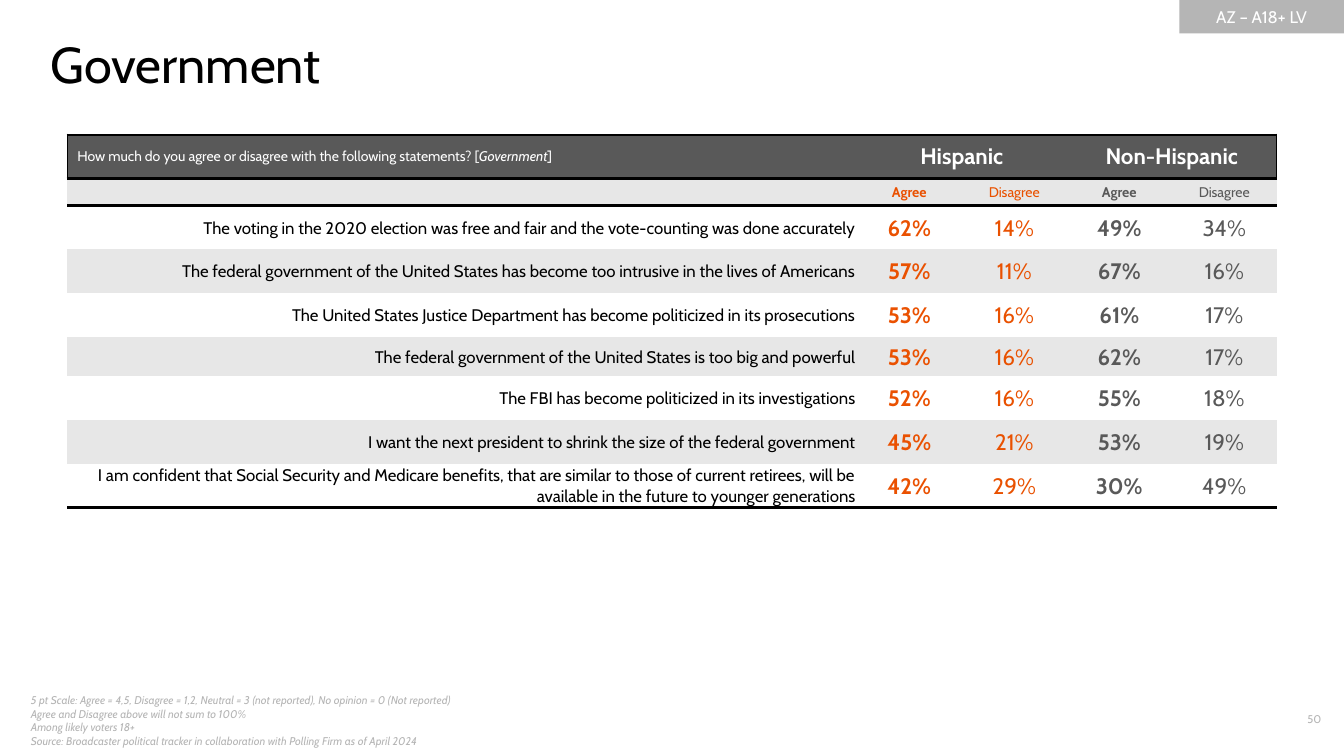
import pptx
import pptx.util
import pptx.dml.color
import pptx.enum.shapes
import pptx.enum.text
import pptx.oxml
import pptx.oxml.ns

RGB = pptx.dml.color.RGBColor
ALIGN = pptx.enum.text.PP_ALIGN
ANCHOR = pptx.enum.text.MSO_ANCHOR
BLACK = RGB(0, 0, 0)
WHITE = RGB(255, 255, 255)
DARK = RGB(0x59, 0x59, 0x59)
PALE = RGB(0xE7, 0xE7, 0xE7)
GRAY = RGB(0xB5, 0xB5, 0xB5)
RUST = RGB(0xEA, 0x51, 0x01)
EMBER = RGB(0xE9, 0x51, 0x00)
TONES = [(RUST, True), (EMBER, False), (DARK, True), (DARK, False)]
PLAIN = "{2D5ABB26-0587-4C30-8999-92F81FD0307C}"
WIDE, HIGH = 13.33, 7.5
COLS = 80
THICK, THIN = 2.25, 1

ROWS = [
    ("The voting in the 2020 election was free and fair and the vote-counting was done accurately",
     62, 14, 49, 34),
    ("The federal government of the United States has become too intrusive in the lives of Americans",
     57, 11, 67, 16),
    ("The United States Justice Department has become politicized in its prosecutions",
     53, 16, 61, 17),
    ("The federal government of the United States is too big and powerful", 53, 16, 62, 17),
    ("The FBI has become politicized in its investigations", 52, 16, 55, 18),
    ("I want the next president to shrink the size of the federal government", 45, 21, 53, 19),
    ("I am confident that Social Security and Medicare benefits, that are similar to those of "
     "current retirees, will be available in the future to younger generations", 42, 29, 30, 49),
]
NOTES = """5 pt Scale: Agree = 4,5, Disagree = 1,2, Neutral = 3 (not reported), No opinion = 0 (Not reported)
Agree and Disagree above will not sum to 100%
Among likely voters 18+
Source: Broadcaster political tracker in collaboration with Polling Firm as of April 2024"""


def grid(n):
    return pptx.util.Inches(n * WIDE / COLS)


def write(frame, text, size=12, color=BLACK, bold=False, italic=False, align=ALIGN.LEFT):
    for i, line in enumerate(text.split("\n")):
        para = frame.paragraphs[0] if i == 0 else frame.add_paragraph()
        para.alignment = align
        for j, part in enumerate(line.split("|")):
            run = para.add_run()
            run.text = part
            font = run.font
            font.name, font.size, font.bold = "Cabin", pptx.util.Pt(size), bold
            font.italic = italic or j % 2 == 1
            font.color.rgb = color


def paint(cell, fill, tight=False):
    cell.fill.solid()
    cell.fill.fore_color.rgb = fill
    cell.vertical_anchor = ANCHOR.MIDDLE
    if tight:
        cell.margin_left = cell.margin_right = cell.margin_top = pptx.util.Inches(0.01)
        cell.margin_bottom = 0


def edge(cell, **sides):
    props = cell._tc.get_or_add_tcPr()
    names = [side for side in ("L", "R", "T", "B") if side in sides]
    for i, side in enumerate(names):
        line = pptx.oxml.parse_xml(
            f'<a:ln{side} {pptx.oxml.ns.nsdecls("a")} w="{pptx.util.Pt(sides[side])}">'
            f'<a:solidFill><a:srgbClr val="{BLACK}"/></a:solidFill></a:ln{side}>')
        props.insert(i, line)


def title(slide, x, y, w, h):
    head = slide.shapes.title
    head.left, head.top, head.width, head.height = map(grid, (x, y, w, h))
    frame = head.text_frame
    frame.margin_left = frame.margin_right = frame.margin_top = frame.margin_bottom = 0
    frame.vertical_anchor = ANCHOR.TOP
    frame.auto_size = pptx.enum.text.MSO_AUTO_SIZE.NONE
    write(frame, "Government", size=36)


def badge(slide, x, y, w, h):
    kind = pptx.enum.shapes.MSO_SHAPE.RECTANGLE
    tag = slide.shapes.add_shape(kind, *map(grid, (x, y, w, h)))
    tag.shadow.inherit = False
    tag.fill.solid()
    tag.fill.fore_color.rgb = GRAY
    tag.line.fill.background()
    tag.text_frame.vertical_anchor = ANCHOR.MIDDLE
    write(tag.text_frame, "AZ – A18+ LV", color=WHITE, align=ALIGN.CENTER)


def label(slide, x, y, w, h, text, anchor=ANCHOR.TOP, **look):
    frame = slide.shapes.add_textbox(*map(grid, (x, y, w, h))).text_frame
    frame.word_wrap = True
    frame.vertical_anchor = anchor
    write(frame, text, size=8, color=GRAY, **look)


def heads(table):
    ask = "How much do you agree or disagree with the following statements? [|Government|]"
    write(table.cell(0, 0).text_frame, ask, size=10, color=WHITE)
    for col, name in ((1, "Hispanic"), (3, "Non-Hispanic")):
        table.cell(0, col).merge(table.cell(0, col + 1))
        write(table.cell(0, col).text_frame, name, size=16, color=WHITE, bold=True,
              align=ALIGN.CENTER)
    for col in range(5):
        top, sub = table.cell(0, col), table.cell(1, col)
        paint(top, DARK)
        paint(sub, PALE)
        sides = {"L": THIN} if col == 0 else {"R": THIN} if col > 2 else {}
        edge(top, T=THICK, B=THICK, **sides)
        edge(sub, T=THICK)
    blank = table.cell(1, 0).text_frame.paragraphs[0]
    blank._p.get_or_add_endParaRPr().set("sz", "1000")
    for col, (color, bold) in enumerate(TONES, 1):
        write(table.cell(1, col).text_frame, "Agree" if bold else "Disagree", size=10,
              color=color, bold=bold, align=ALIGN.CENTER)


def survey(slide, x, y, w, h):
    count = len(ROWS) + 2
    frame = slide.shapes.add_table(count, 5, *map(grid, (x, y, w, h)))
    table = frame.table
    table.first_row = table.horz_banding = False
    table._tbl.tblPr.find(pptx.oxml.ns.qn("a:tableStyleId")).text = PLAIN
    slot = 6.25
    for i, col in enumerate(table.columns):
        col.width = grid(slot if i else w - 4 * slot)
    lows = {1: 1.5, 5: 2.34}
    tall = (h - sum(lows.values())) / (count - len(lows))
    for i, row in enumerate(table.rows):
        row.height = grid(lows.get(i, tall))
    heads(table)
    for i, (text, *shares) in enumerate(ROWS, 2):
        for cell in table.rows[i].cells:
            paint(cell, PALE if i % 2 else WHITE, tight=True)
            if i == count - 1:
                edge(cell, B=THICK)
        write(table.cell(i, 0).text_frame, text, align=ALIGN.RIGHT)
        for col, (share, (color, bold)) in enumerate(zip(shares, TONES), 1):
            write(table.cell(i, col).text_frame, f"{share}%", size=16, color=color,
                  bold=bold, align=ALIGN.CENTER)


def main():
    deck = pptx.Presentation()
    deck.slide_width = pptx.util.Inches(WIDE)
    deck.slide_height = pptx.util.Inches(HIGH)
    slide = deck.slides.add_slide(deck.slide_layouts[5])
    label(slide, 1.25, 41.7, 30.65, 2.4, NOTES, anchor=ANCHOR.MIDDLE, italic=True)
    label(slide, 74, 42.1, 5.25, 1.6, "50", align=ALIGN.RIGHT)
    badge(slide, 70.2, 0, 9.8, 2)
    title(slide, 3, 2, 72, 3.65)
    survey(slide, 4, 8.04, 72, 22.08)
    deck.save("out.pptx")


if __name__ == "__main__":
    main()
